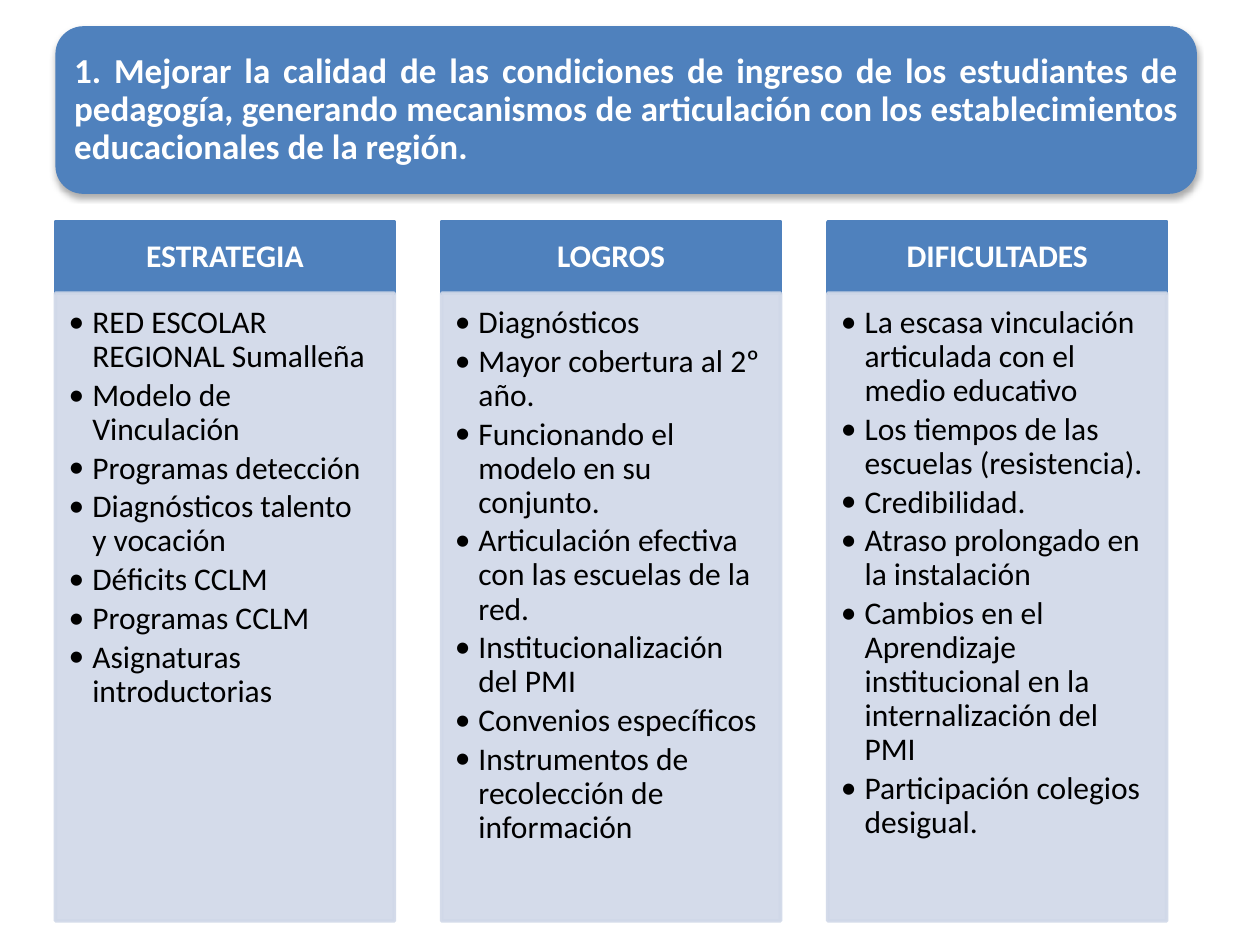
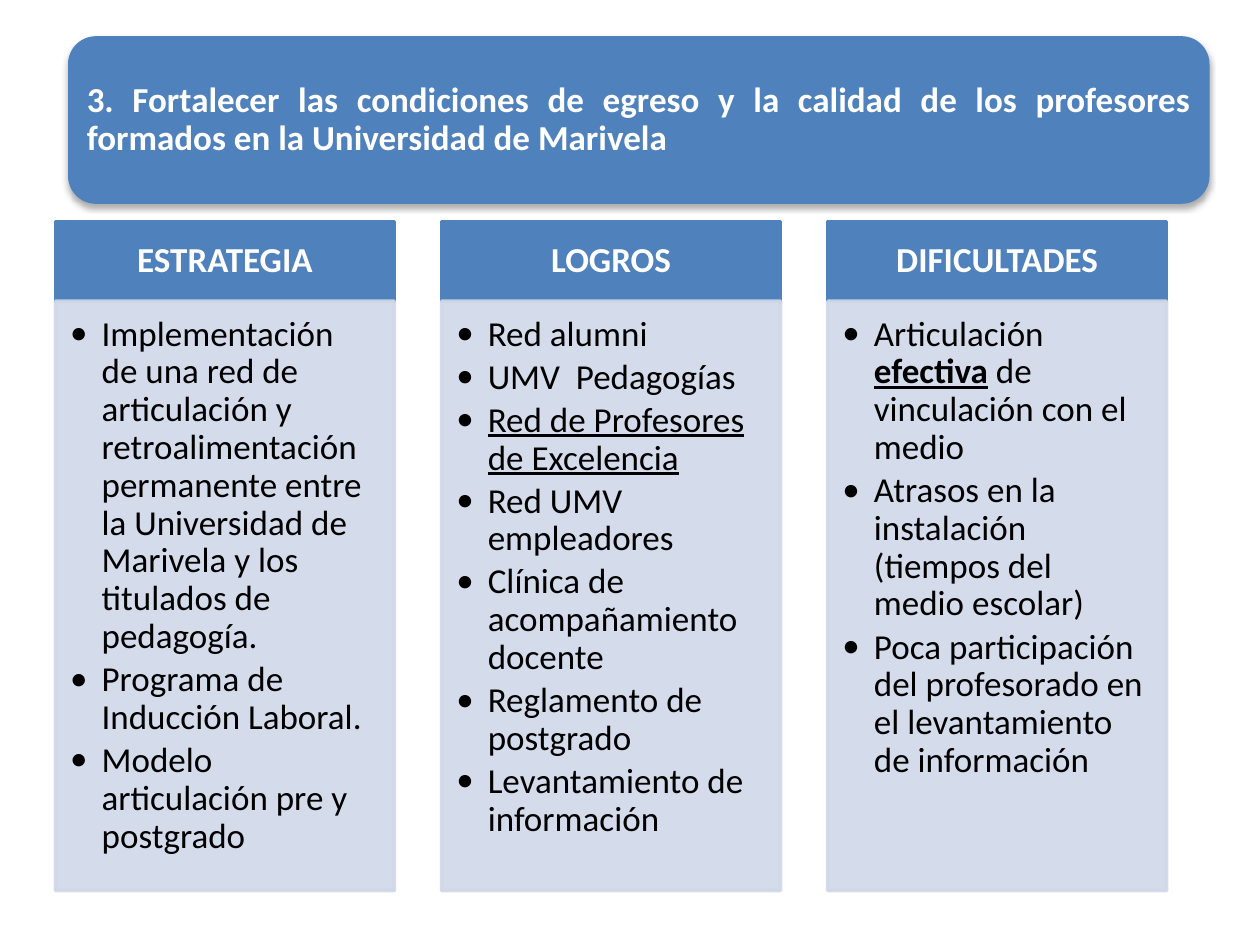
from dataclasses import dataclass

from lxml import etree
from pptx import Presentation
from pptx.dml.color import RGBColor
from pptx.enum.shapes import MSO_SHAPE
from pptx.enum.text import MSO_ANCHOR, MSO_AUTO_SIZE, PP_ALIGN
from pptx.oxml.ns import qn
from pptx.util import Pt

RECT, ROUNDED = MSO_SHAPE.RECTANGLE, MSO_SHAPE.ROUNDED_RECTANGLE
TOP, MIDDLE = MSO_ANCHOR.TOP, MSO_ANCHOR.MIDDLE
LEFT, CENTER, JUSTIFY = PP_ALIGN.LEFT, PP_ALIGN.CENTER, PP_ALIGN.JUSTIFY
NO_AUTOFIT = MSO_AUTO_SIZE.NONE
TITLE_ONLY = 5


@dataclass(frozen=True)
class Theme:
    font: str = "Calibri"
    blue: RGBColor = RGBColor(0x4F, 0x81, 0xBD)
    pale: RGBColor = RGBColor(0xD0, 0xD8, 0xE8)
    white: RGBColor = RGBColor(0xFF, 0xFF, 0xFF)
    black: RGBColor = RGBColor(0, 0, 0)
    title_size: int = 20
    line_spacing: float = 0.9
    border: int = 2
    pale_alpha: int = 90


THEME = Theme()
COLUMN_WIDTH = 193.7
COLUMN_HEADS = ["ESTRATEGIA", "LOGROS", "DIFICULTADES"]

SLIDES = [
    {
        "title": "1. Mejorar la calidad de las condiciones de ingreso de los estudiantes de "
                 "pedagogía, generando mecanismos de articulación con los establecimientos "
                 "educacionales de la región.",
        "banner": (31.7, 15, 652.3, 95.8),
        "columns": (31.7, 126.7, 635, 399.6),
        "size": 18,
        "indent": 13.5,
        "bullets": [
            ["RED ESCOLAR REGIONAL Sumalleña", "Modelo de Vinculación",
             "Programas detección", "Diagnósticos talento  y vocación",
             "Déficits CCLM", "Programas CCLM", "Asignaturas introductorias"],
            ["Diagnósticos", "Mayor cobertura al 2º año.",
             "Funcionando el modelo en su conjunto.",
             "Articulación efectiva con las escuelas de la red.",
             "Institucionalización del PMI", "Convenios específicos",
             "Instrumentos de recolección de información"],
            ["La escasa vinculación articulada con el medio educativo",
             "Los tiempos de las escuelas (resistencia).", "Credibilidad.",
             "Atraso prolongado en la instalación",
             "Cambios en el Aprendizaje institucional en la internalización del PMI",
             "Participación colegios desigual."],
        ],
    },
    {
        "title": "3. Fortalecer las condiciones de egreso y la calidad de los profesores "
                 "formados en la Universidad de Marivela",
        "banner": (38.9, 20.7, 652.3, 95.8),
        "columns": (31.7, 126.7, 635, 382.3),
        "size": 20,
        "indent": 18,
        "bullets": [
            ["Implementación de una red de articulación y retroalimentación permanente "
             "entre la Universidad de Marivela y los titulados de pedagogía.",
             "Programa de Inducción Laboral.", "Modelo articulación pre y postgrado"],
            ["Red alumni", "UMV  Pedagogías",
             [("Red de Profesores de Excelencia", {"underline": True})],
             "Red UMV empleadores", "Clínica de acompañamiento docente",
             "Reglamento de postgrado", "Levantamiento de información"],
            [[("Articulación ", {}), ("efectiva", {"bold": True, "underline": True}),
              (" de vinculación con el medio", {})],
             "Atrasos en la instalación (tiempos del medio escolar)",
             "Poca participación del profesorado en el levantamiento de información"],
        ],
    },
]


def add_box(slide, kind, box, fill):
    s = slide.shapes.add_shape(kind, *map(Pt, box))
    s.shadow.inherit = False
    s.fill.solid()
    s.fill.fore_color.rgb = fill
    return s


def add_border(s, color):
    s.line.color.rgb = color
    s.line.width = Pt(THEME.border)


def set_frame(tf, margins, anchor):
    tf.word_wrap = True
    tf.auto_size = NO_AUTOFIT
    tf.vertical_anchor = anchor
    tf.margin_left, tf.margin_top, tf.margin_right, tf.margin_bottom = map(Pt, margins)


def format_paragraph(p, size, color, align, bold=False):
    p.alignment = align
    p.line_spacing = THEME.line_spacing
    for r in p.runs:
        r.font.name = THEME.font
        r.font.size = Pt(size)
        r.font.color.rgb = color
        r.font.bold = r.font.bold or bold


def add_bullet(p, indent):
    pPr = p._p.get_or_add_pPr()
    pPr.set("marL", str(Pt(indent)))
    pPr.set("indent", str(-Pt(indent)))
    etree.SubElement(pPr, qn("a:buFont"), typeface=THEME.font)
    etree.SubElement(pPr, qn("a:buChar"), char="•")


def set_alpha(color, percent):
    etree.SubElement(color, qn("a:alpha"), val=str(percent * 1000))


def add_drop_shadow(s):
    effects = s._element.spPr.find(qn("a:effectLst"))
    shadow = etree.SubElement(effects, qn("a:outerShdw"), blurRad=str(Pt(3.5)),
                              dist=str(Pt(2.2)), dir="5400000", rotWithShape="0")
    set_alpha(etree.SubElement(shadow, qn("a:srgbClr"), val=str(THEME.black)), 32)


def draw_banner(slide, box, text):
    banner = add_box(slide, ROUNDED, box, THEME.blue)
    banner.line.fill.background()
    add_drop_shadow(banner)

    title = slide.shapes.title
    title._element.addprevious(banner._element)
    x, y, w, h = box
    pad = 4.68
    title.left, title.top = Pt(x + pad), Pt(y + pad)
    title.width, title.height = Pt(w - 2 * pad), Pt(h - 2 * pad)
    tf = title.text_frame
    tf.text = text
    set_frame(tf, [6] * 4, MIDDLE)
    format_paragraph(tf.paragraphs[0], THEME.title_size, THEME.white, JUSTIFY, bold=True)


def draw_column(slide, box, head, bullets, size, indent):
    x, y, w, h = box
    head_height = 2.27 * size
    side = 0.56 * size

    header = add_box(slide, RECT, (x, y, w, head_height), THEME.blue)
    add_border(header, THEME.blue)
    tf = header.text_frame
    tf.text = head
    set_frame(tf, (side, 0.32 * size, side, 0.32 * size), MIDDLE)
    format_paragraph(tf.paragraphs[0], size, THEME.white, CENTER, bold=True)

    body = add_box(slide, RECT, (x, y + head_height, w, h - head_height), THEME.pale)
    add_border(body, THEME.pale)
    for color in body._element.spPr.iter(qn("a:srgbClr")):
        set_alpha(color, THEME.pale_alpha)
    tf = body.text_frame
    set_frame(tf, (0.42 * size, 0.42 * size, side, 0.63 * size), TOP)
    for i, bullet in enumerate(bullets):
        p = tf.add_paragraph() if i else tf.paragraphs[0]
        parts = [(bullet, {})] if isinstance(bullet, str) else bullet
        for text, style in parts:
            r = p.add_run()
            r.text = text
            r.font.bold = style.get("bold")
            r.font.underline = style.get("underline")
        format_paragraph(p, size, THEME.black, LEFT)
        p.space_after = Pt(0.15 * size)
        add_bullet(p, indent)


def draw_columns(slide, box, bullets, size, indent):
    x, y, w, h = box
    step = (w - COLUMN_WIDTH) / (len(COLUMN_HEADS) - 1)
    for i, (head, items) in enumerate(zip(COLUMN_HEADS, bullets)):
        draw_column(slide, (x + i * step, y, COLUMN_WIDTH, h), head, items, size, indent)


def build_slide(prs, content):
    slide = prs.slides.add_slide(prs.slide_layouts[TITLE_ONLY])
    draw_banner(slide, content["banner"], content["title"])
    draw_columns(slide, content["columns"], content["bullets"],
                 content["size"], content["indent"])


def main():
    prs = Presentation()
    prs.slide_width, prs.slide_height = Pt(720), Pt(540)
    for content in SLIDES:
        build_slide(prs, content)
    prs.save("out.pptx")


if __name__ == "__main__":
    main()
